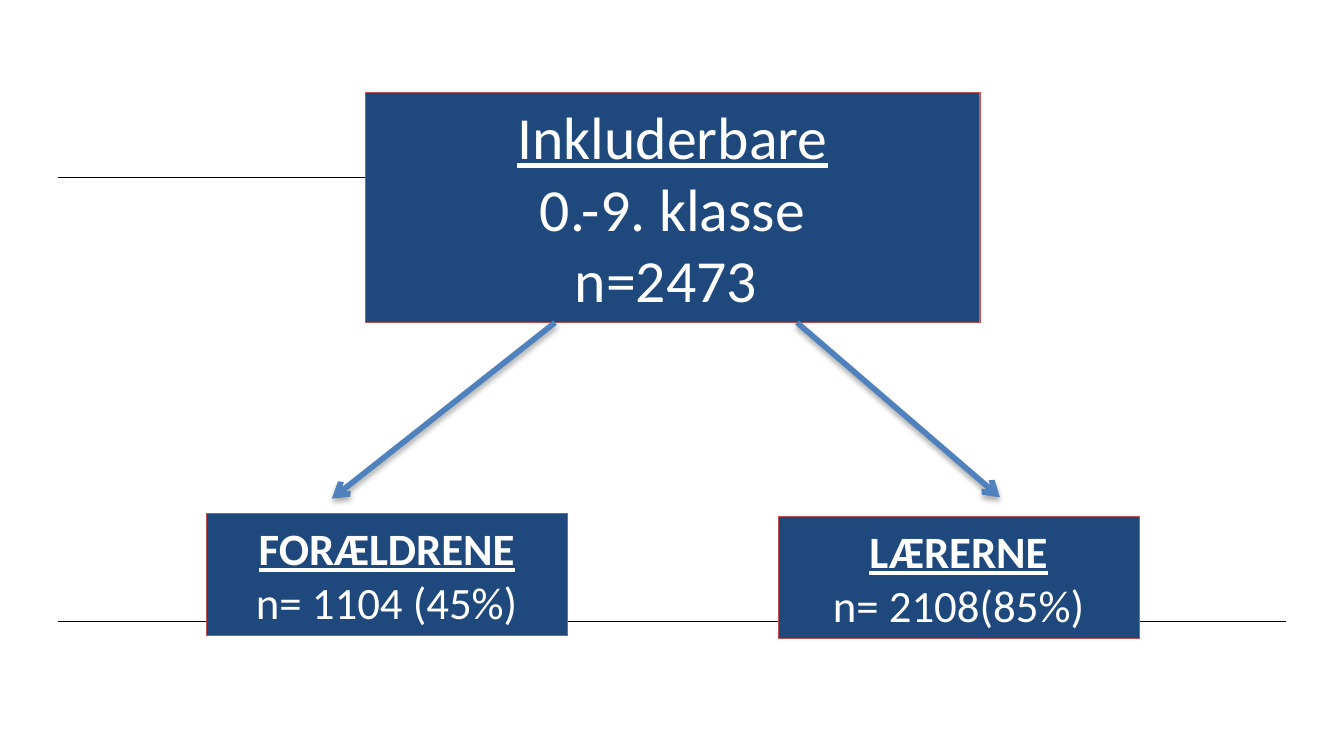
from lxml import etree
from pptx import Presentation
from pptx.dml.color import RGBColor
from pptx.enum.shapes import MSO_CONNECTOR, MSO_SHAPE
from pptx.enum.text import MSO_ANCHOR, MSO_AUTO_SIZE, PP_ALIGN
from pptx.oxml import parse_xml
from pptx.oxml.ns import nsdecls, qn
from pptx.util import Pt

EMU_PER_PX = 4572  # 200 px to the inch
STRAIGHT = MSO_CONNECTOR.STRAIGHT
RECTANGLE = MSO_SHAPE.RECTANGLE
MIDDLE = MSO_ANCHOR.MIDDLE
GROW = MSO_AUTO_SIZE.SHAPE_TO_FIT_TEXT
CENTER = PP_ALIGN.CENTER

FONT = "Calibri"
NAVY, RED, BLUE = "1F497D", "C0504D", "4F81BD"
BLACK, WHITE = "000000", "FFFFFF"

SHADOW = f"""<a:effectLst {nsdecls('a')}>
  <a:outerShdw blurRad="40000" dist="23000" dir="5400000" rotWithShape="0">
    <a:srgbClr val="{BLACK}"><a:alpha val="35000"/></a:srgbClr>
  </a:outerShdw>
</a:effectLst>"""


def px(value):
    return value * EMU_PER_PX


def color(hex_code):
    return RGBColor.from_string(hex_code)


def add_line(slide, start, end, line_color, width):
    """Draw a straight line without effects."""
    line = slide.shapes.add_connector(STRAIGHT, *map(px, (*start, *end)))
    line.line.color.rgb = color(line_color)
    line.line.width = Pt(width)
    etree.SubElement(line._element.spPr, qn("a:effectLst"))
    return line


def add_arrow(slide, start, end):
    """Draw a thick line with an open arrowhead and a soft shadow."""
    arrow = add_line(slide, start, end, BLUE, 3)
    properties = arrow._element.spPr
    etree.SubElement(properties.find(qn("a:ln")), qn("a:tailEnd"), type="arrow")
    properties.replace(properties.find(qn("a:effectLst")), parse_xml(SHADOW))


def add_group_box(slide, bounds, heading, details, size, bold_heading=False):
    """Draw a box with an underlined heading above its detail lines."""
    box = slide.shapes.add_shape(RECTANGLE, *map(px, bounds))
    box.shadow.inherit = False
    box.fill.solid()
    box.fill.fore_color.rgb = color(NAVY)
    box.line.color.rgb = color(RED)
    box.line.width = Pt(0.14)

    frame = box.text_frame
    frame.word_wrap = True
    frame.auto_size = GROW
    frame.vertical_anchor = MIDDLE
    for index, text in enumerate([heading, *details]):
        paragraph = frame.add_paragraph() if index else frame.paragraphs[0]
        paragraph.alignment = CENTER
        run = paragraph.add_run()
        run.text = text
        run.font.name = FONT
        run.font.size = Pt(size)
        run.font.color.rgb = color(WHITE)
        run.font.underline = index == 0
        run.font.bold = bold_heading and index == 0


def main():
    presentation = Presentation()
    presentation.slide_width = px(2000)
    presentation.slide_height = px(1125)
    slide = presentation.slides.add_slide(presentation.slide_layouts[6])

    # Thin rules behind the boxes
    for right, y in ((1914, 924), (1000, 264)):
        add_line(slide, (86, y), (right, y), BLACK, 0.25)

    # All pupils
    add_group_box(slide, (544, 137, 914, 343), "Inkluderbare",
                  ["0.-9. klasse", "n=2473 "], 32)

    # Split into the two groups of respondents
    add_arrow(slide, (826, 480), (494, 742))
    add_arrow(slide, (1186, 480), (1488, 740))

    # Respondents
    for left, top, heading, count in (
        (307, 764, "FORÆLDRENE", "n= 1104 (45%)"),
        (1158, 768, "LÆRERNE", "n= 2108(85%)"),
    ):
        add_group_box(slide, (left, top, 537, 182), heading, [count], 24,
                      bold_heading=True)

    presentation.save("out.pptx")


if __name__ == "__main__":
    main()
